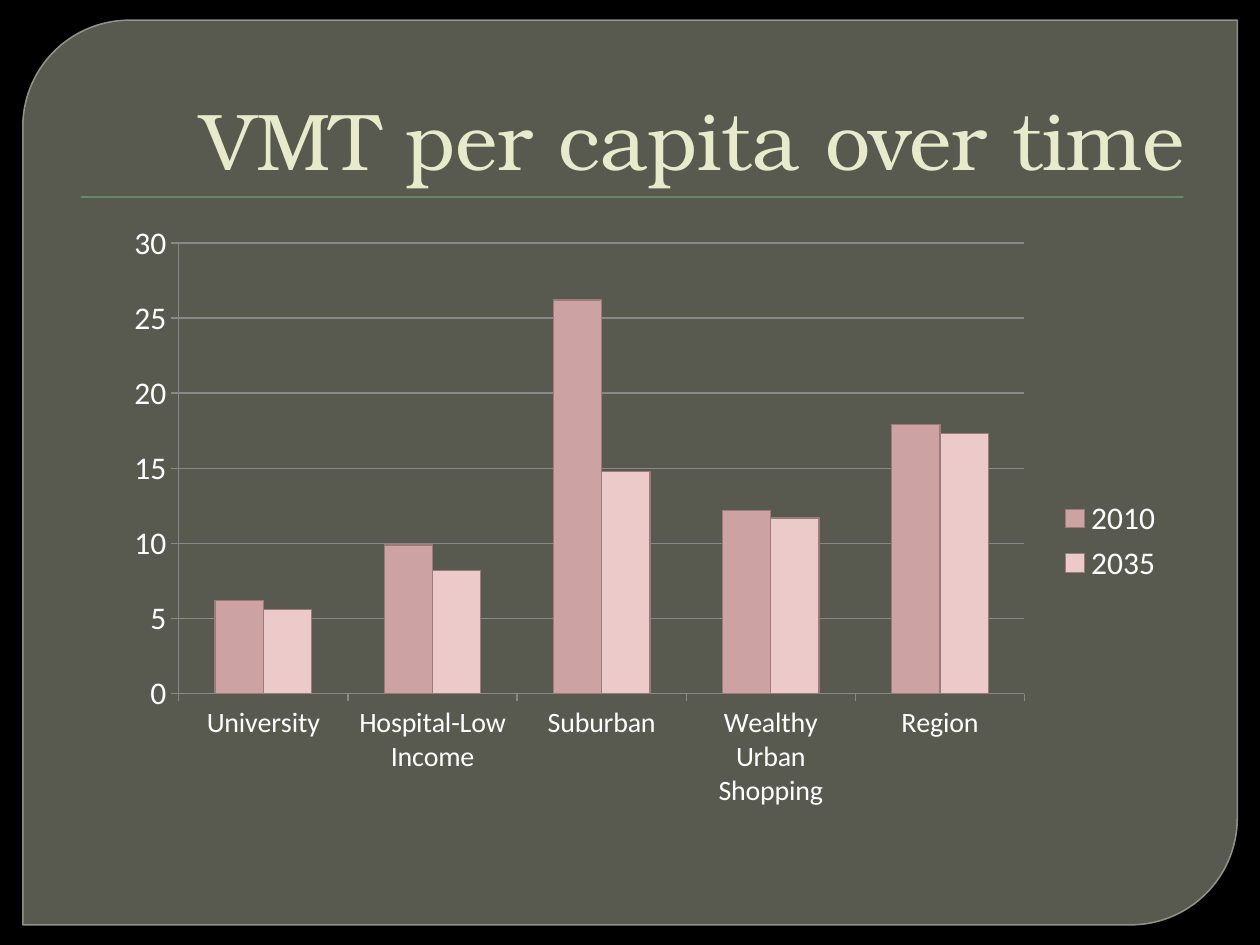
from lxml import etree
from pptx import Presentation
from pptx.chart.data import CategoryChartData
from pptx.dml.color import RGBColor
from pptx.enum.chart import XL_CHART_TYPE, XL_LEGEND_POSITION, XL_TICK_MARK
from pptx.enum.shapes import MSO_SHAPE
from pptx.enum.text import MSO_ANCHOR, PP_ALIGN
from pptx.oxml import parse_xml
from pptx.oxml.ns import nsdecls, qn
from pptx.util import Pt

CLUSTERED = XL_CHART_TYPE.COLUMN_CLUSTERED
LEGEND_RIGHT = XL_LEGEND_POSITION.RIGHT
TICK_OUTSIDE = XL_TICK_MARK.OUTSIDE
PANEL_SHAPE = MSO_SHAPE.ROUND_2_DIAG_RECTANGLE
RULE_SHAPE = MSO_SHAPE.RECTANGLE
BOTTOM = MSO_ANCHOR.BOTTOM
RIGHT = PP_ALIGN.RIGHT

AREAS = ["University", "Hospital-Low Income", "Suburban",
         "Wealthy Urban Shopping", "Region"]
VMT = [("2010", (6.2, 9.9, 26.2, 12.2, 17.9), "CDA2A2"),
       ("2035", (5.6, 8.2, 14.8, 11.7, 17.3), "ECCACA")]
PLOT_LAYOUT = {"x": 0.078, "y": 0.035, "w": 0.782, "h": 0.704}


def rgb(value):
    """Return the colour for a hex string."""
    return RGBColor.from_string(value)


def set_alpha(fill_format, percent):
    """Make a solid fill or line colour partly transparent."""
    color = fill_format.find(".//" + qn("a:srgbClr"))
    etree.SubElement(color, qn("a:alpha"), val=str(percent * 1000))


def add_panel(slide):
    """Add the translucent panel with two rounded corners."""
    panel = slide.shapes.add_shape(PANEL_SHAPE, Pt(13), Pt(11.5), Pt(694), Pt(517))
    panel.shadow.inherit = False
    panel.adjustments[0] = 0.118
    panel.adjustments[1] = 0
    panel.fill.solid()
    panel.fill.fore_color.rgb = rgb("888B7B")
    panel.line.color.rgb = rgb("9DA090")
    panel.line.width = Pt(0.87)
    properties = panel.element.spPr
    set_alpha(properties.find(qn("a:solidFill")), 65)
    set_alpha(properties.find(qn("a:ln")), 88)


def add_title_rule(slide):
    """Add the thin green rule with its soft shadow."""
    rule = slide.shapes.add_shape(RULE_SHAPE, Pt(46.2), Pt(112.2), Pt(630), Pt(0.72))
    rule.fill.solid()
    rule.fill.fore_color.rgb = rgb("72A376")
    rule.line.fill.background()
    rule.element.spPr.append(parse_xml(
        f'<a:effectLst {nsdecls("a")}>'
        '<a:outerShdw blurRad="12700" dist="12700" dir="5400000" rotWithShape="0">'
        '<a:srgbClr val="000000"><a:alpha val="75000"/></a:srgbClr>'
        '</a:outerShdw></a:effectLst>'))


def add_title(slide, wording):
    """Add the right-aligned title."""
    title = slide.shapes.add_textbox(Pt(36), Pt(20), Pt(648), Pt(90))
    frame = title.text_frame
    frame.word_wrap = True
    frame.vertical_anchor = BOTTOM
    paragraph = frame.paragraphs[0]
    paragraph.alignment = RIGHT
    run = paragraph.add_run()
    run.text = wording
    run.font.size = Pt(46)
    run.font.name = "TeX Gyre Bonum"
    run.font.color.rgb = rgb("E7EACB")


def set_plot_layout(chart):
    """Fix the inner plot area as fractions of the chart."""
    plot_area = chart.element.find(".//" + qn("c:plotArea"))
    layout = plot_area.find(qn("c:layout"))
    if layout is None:
        layout = etree.Element(qn("c:layout"))
        plot_area.insert(0, layout)
    manual = etree.SubElement(layout, qn("c:manualLayout"))
    settings = {"layoutTarget": "inner", "xMode": "edge", "yMode": "edge", **PLOT_LAYOUT}
    for tag, value in settings.items():
        etree.SubElement(manual, qn(f"c:{tag}"), val=str(value))


def style_line(line, color="888888"):
    """Give a chart line its colour and hairline width."""
    line.color.rgb = rgb(color)
    line.width = Pt(0.75)


def add_vmt_chart(slide):
    """Add the clustered columns of VMT by area and year."""
    data = CategoryChartData()
    data.categories = AREAS
    for year, values, _ in VMT:
        data.add_series(year, values)
    chart = slide.shapes.add_chart(
        CLUSTERED, Pt(54), Pt(126), Pt(618), Pt(366), data).chart
    chart.has_title = False
    chart.font.size = Pt(18)
    chart.font.name = "Calibri"
    chart.font.color.rgb = rgb("FFFFFF")
    chart.has_legend = True
    chart.legend.position = LEGEND_RIGHT
    chart.legend.include_in_layout = False
    set_plot_layout(chart)

    plot = chart.plots[0]
    plot.gap_width = 150
    plot.overlap = 0
    plot.vary_by_categories = False
    for series, (_, _, color) in zip(plot.series, VMT):
        series.format.fill.solid()
        series.format.fill.fore_color.rgb = rgb(color)
        style_line(series.format.line, "9C7B7B")

    areas, vmt = chart.category_axis, chart.value_axis
    for axis in (areas, vmt):
        axis.major_tick_mark = TICK_OUTSIDE
        style_line(axis.format.line)
    areas.tick_labels.font.size = Pt(16)
    vmt.minimum_scale = 0
    vmt.maximum_scale = 30
    vmt.major_unit = 5
    vmt.has_major_gridlines = True
    style_line(vmt.major_gridlines.format.line)


def main():
    """Build and save the slide."""
    deck = Presentation()
    deck.slide_width, deck.slide_height = Pt(720), Pt(540)
    slide = deck.slides.add_slide(deck.slide_layouts[6])
    slide.background.fill.solid()
    slide.background.fill.fore_color.rgb = rgb("000000")
    add_panel(slide)
    add_title_rule(slide)
    add_title(slide, "VMT per capita over time")
    add_vmt_chart(slide)
    deck.save("out.pptx")


if __name__ == "__main__":
    main()
